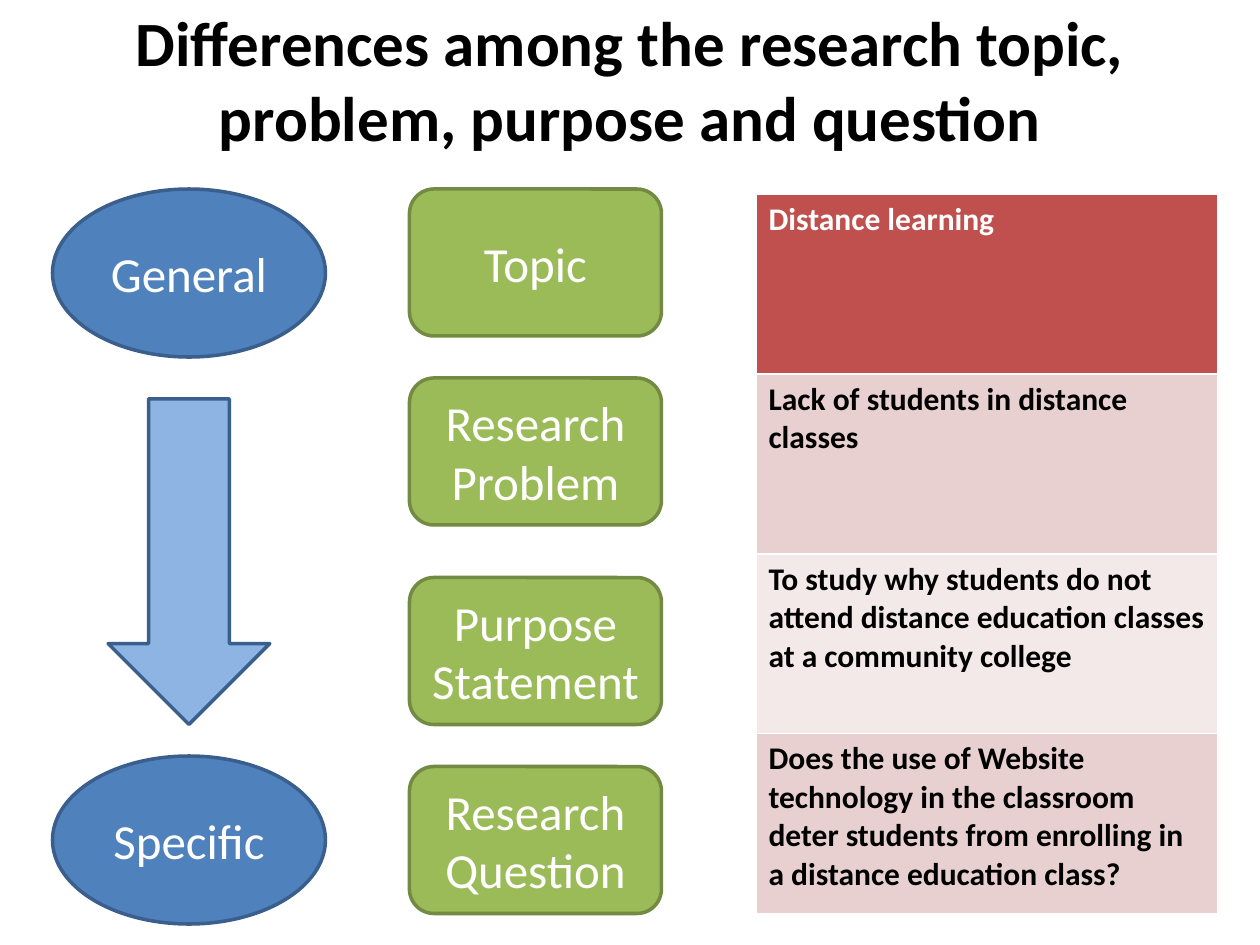
from dataclasses import dataclass

import pptx
import pptx.dml.color
import pptx.enum.shapes
import pptx.enum.text
import pptx.util

EMU_PER_PX = 7620  # 120 px to the inch
FONT = "Calibri"
WHITE, BLACK = "FFFFFF", "000000"
SHAPES = pptx.enum.shapes.MSO_SHAPE
CENTER = pptx.enum.text.PP_ALIGN.CENTER
MIDDLE = pptx.enum.text.MSO_ANCHOR.MIDDLE


@dataclass(frozen=True)
class Style:
    preset: pptx.enum.shapes.MSO_SHAPE
    fill: str
    line: str


@dataclass(frozen=True)
class Node:
    style: Style
    left: int
    top: int
    width: int
    height: int
    label: str = ""


@dataclass(frozen=True)
class Example:
    text: str
    fill: str
    color: str = BLACK


ENDPOINT = Style(SHAPES.OVAL, "4F81BD", "3A5F8C")
ARROW = Style(SHAPES.DOWN_ARROW, "8EB4E3", "3A5F8C")
STAGE = Style(SHAPES.ROUNDED_RECTANGLE, "9BBB59", "738A42")

SCALE_NODES = [
    Node(ENDPOINT, 50, 180, 260, 160, "General"),
    Node(ENDPOINT, 50, 720, 260, 160, "Specific"),
    Node(ARROW, 103, 380, 154, 310),
]
STAGE_NODES = [
    Node(STAGE, 390, top, 240, 140, label)
    for top, label in [
        (180, "Topic"),
        (360, "Research Problem"),
        (550, "Purpose Statement"),
        (730, "Research Question"),
    ]
]
EXAMPLES = [
    Example("Distance learning", "C0504D", WHITE),
    Example("Lack of students in distance classes", "E8D0D0"),
    Example("To study why students do not attend distance education classes "
            "at a community college", "F4E9E9"),
    Example("Does the use of Website technology in the classroom deter students "
            "from enrolling in a distance education class?", "E8D0D0"),
]


def px(length: int) -> pptx.util.Emu:
    return pptx.util.Emu(length * EMU_PER_PX)


def rgb(value: str) -> pptx.dml.color.RGBColor:
    return pptx.dml.color.RGBColor.from_string(value)


def paint(fill, color: str) -> None:
    fill.solid()
    fill.fore_color.rgb = rgb(color)


def write(frame, text: str, size: int, color: str, bold: bool = False) -> None:
    frame.text = text
    font = frame.paragraphs[0].runs[0].font
    font.name = FONT
    font.size = pptx.util.Pt(size)
    font.bold = bold
    font.color.rgb = rgb(color)


def add_title(slide, text: str) -> None:
    title = slide.shapes.title
    title.left, title.top, title.width, title.height = map(px, (60, 0, 1080, 150))
    write(title.text_frame, text, 36, BLACK, bold=True)
    title.text_frame.vertical_anchor = MIDDLE
    title.text_frame.paragraphs[0].alignment = CENTER


def add_node(slide, node: Node) -> None:
    box = map(px, (node.left, node.top, node.width, node.height))
    shape = slide.shapes.add_shape(node.style.preset, *box)
    shape.shadow.inherit = False
    paint(shape.fill, node.style.fill)
    paint(shape.line.fill, node.style.line)
    shape.line.width = pptx.util.Pt(2)
    if node.label:
        write(shape.text_frame, node.label, 28, WHITE)
        shape.text_frame.vertical_anchor = MIDDLE
        shape.text_frame.paragraphs[0].alignment = CENTER


def add_examples(slide, examples: list[Example]) -> None:
    # The default table style supplies the white rules between rows
    box = map(px, (720, 185, 440, 685))
    table = slide.shapes.add_table(len(examples), 1, *box).table
    for row, example in zip(table.rows, examples):
        cell = row.cells[0]
        paint(cell.fill, example.fill)
        write(cell.text_frame, example.text, 18, example.color, bold=True)


def main() -> None:
    deck = pptx.Presentation()
    deck.slide_width, deck.slide_height = px(1200), px(900)
    slide = deck.slides.add_slide(deck.slide_layouts.get_by_name("Title Only"))

    # Heading
    add_title(slide, "Differences among the research topic, problem, purpose and question")

    # General-to-specific scale and the four stages beside it
    for node in SCALE_NODES + STAGE_NODES:
        add_node(slide, node)

    # One example per stage
    add_examples(slide, EXAMPLES)

    deck.save("out.pptx")


if __name__ == "__main__":
    main()
